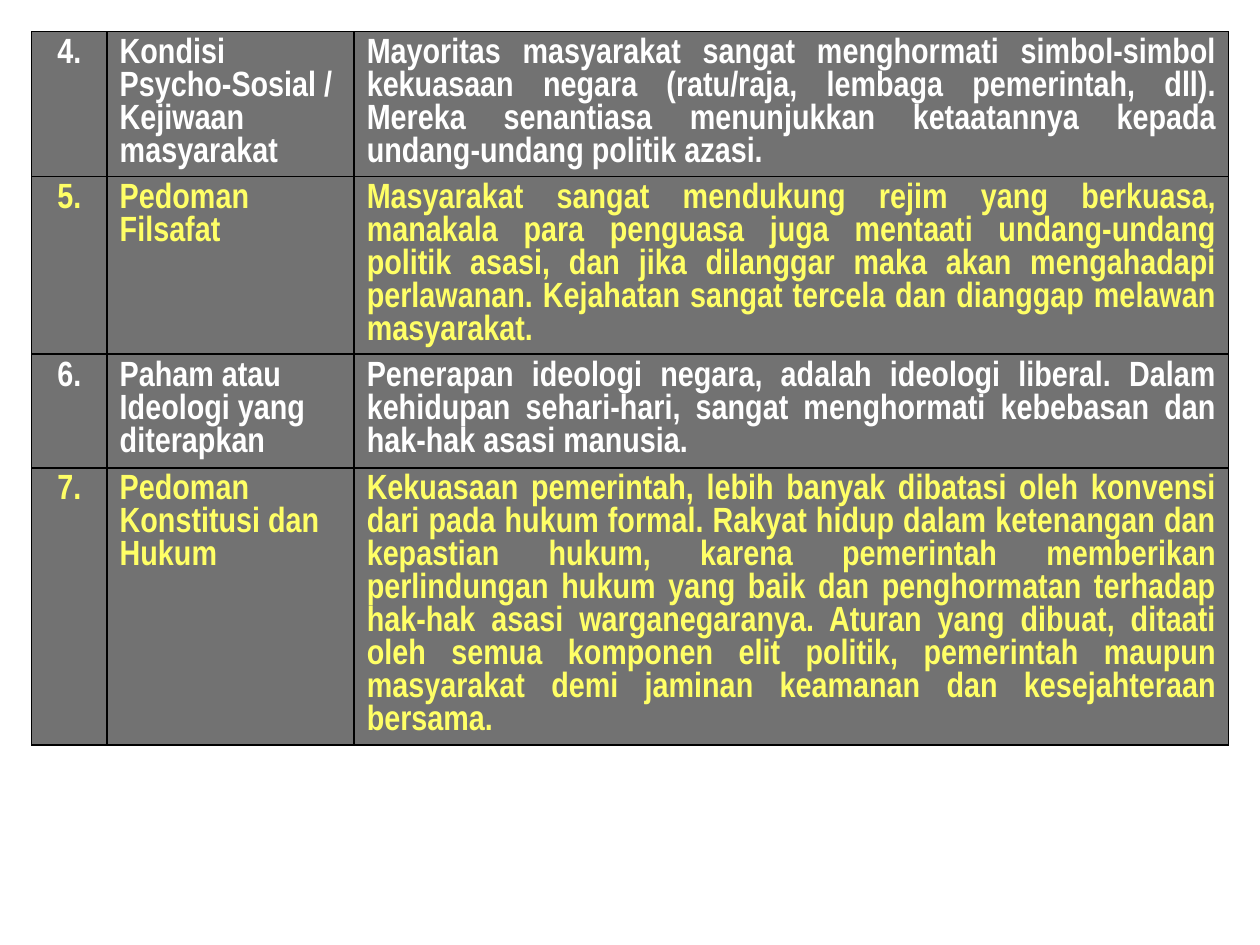
"""Build a slide with a table of political conditions, rows 4 to 7."""
from dataclasses import dataclass

from lxml import etree
from pptx import Presentation
from pptx.dml.color import RGBColor
from pptx.enum.text import PP_ALIGN
from pptx.oxml import parse_xml
from pptx.oxml.ns import nsdecls, qn
from pptx.util import Cm, Pt

CENTER, LEFT, JUSTIFY = PP_ALIGN.CENTER, PP_ALIGN.LEFT, PP_ALIGN.JUSTIFY
FONT, SIZE = "Arial Narrow", 20
WHITE, YELLOW, DARK, BLACK = "FFFFFF", "FFFF66", "0D0D0D", "000000"
OPACITY = 58
MARGIN = 0.64
COLUMN_WIDTHS = (1.52, 4.98, 17.63)
ALIGNMENTS = (CENTER, LEFT, JUSTIFY)
BORDER_SIDES = ("lnL", "lnR", "lnT", "lnB")


@dataclass
class Aspect:
    number: str
    name: str
    description: str
    height: float
    color: str


ASPECTS = (
    Aspect(
        "4.", "Kondisi Psycho-Sosial / Kejiwaan masyarakat",
        "Mayoritas masyarakat sangat menghormati simbol-simbol kekuasaan negara "
        "(ratu/raja, lembaga pemerintah, dll). Mereka senantiasa menunjukkan "
        "ketaatannya kepada undang-undang politik azasi.",
        2.92, WHITE),
    Aspect(
        "5.", "Pedoman Filsafat",
        "Masyarakat sangat mendukung rejim yang berkuasa, manakala para penguasa "
        "juga mentaati undang-undang politik asasi, dan jika dilanggar maka akan "
        "mengahadapi perlawanan. Kejahatan sangat tercela dan dianggap melawan "
        "masyarakat.",
        3.58, YELLOW),
    Aspect(
        "6.", "Paham atau Ideologi yang diterapkan",
        "Penerapan ideologi negara, adalah ideologi liberal. Dalam kehidupan "
        "sehari-hari, sangat menghormati kebebasan dan hak-hak asasi manusia.",
        2.29, WHITE),
    Aspect(
        "7.", "Pedoman Konstitusi dan Hukum",
        "Kekuasaan pemerintah, lebih banyak dibatasi oleh konvensi dari pada hukum "
        "formal. Rakyat hidup dalam ketenangan dan kepastian hukum, karena "
        "pemerintah memberikan perlindungan hukum yang baik dan penghormatan "
        "terhadap hak-hak asasi warganegaranya. Aturan yang dibuat, ditaati oleh "
        "semua komponen elit politik, pemerintah maupun masyarakat demi jaminan "
        "keamanan dan kesejahteraan bersama.",
        5.59, YELLOW),
)


def paint(target, color: str) -> None:
    """Give a fill or a font a solid colour."""
    fill = target.fill
    fill.solid()
    fill.fore_color.rgb = RGBColor.from_string(color)


def style_cell(cell) -> None:
    """Apply the translucent fill and the thin borders."""
    paint(cell, DARK)
    properties = cell._tc.get_or_add_tcPr()
    shade = properties.find(f"{qn('a:solidFill')}/{qn('a:srgbClr')}")
    etree.SubElement(shade, qn("a:alpha"), val=str(OPACITY * 1000))
    for index, side in enumerate(BORDER_SIDES):
        properties.insert(index, parse_xml(
            f'<a:{side} {nsdecls("a")} w="{Pt(1)}"><a:solidFill>'
            f'<a:srgbClr val="{BLACK}"/></a:solidFill></a:{side}>'))


def write_cell(cell, text: str, alignment: PP_ALIGN, color: str) -> None:
    """Write one bold paragraph into a cell."""
    para = cell.text_frame.paragraphs[0]
    para.alignment = alignment
    span = para.add_run()
    span.text = text
    span.font.name = FONT
    span.font.size = Pt(SIZE)
    span.font.bold = True
    paint(span.font, color)


def add_aspect_table(page) -> None:
    """Draw all aspects as one table."""
    frame = page.shapes.add_table(
        len(ASPECTS), len(COLUMN_WIDTHS), Cm(MARGIN), Cm(MARGIN),
        Cm(sum(COLUMN_WIDTHS)), Cm(sum(aspect.height for aspect in ASPECTS)))
    table = frame.table
    table.first_row = False
    table.horz_banding = False
    for column, width in zip(table.columns, COLUMN_WIDTHS):
        column.width = Cm(width)
    for row, aspect in zip(table.rows, ASPECTS):
        row.height = Cm(aspect.height)
        texts = (aspect.number, aspect.name, aspect.description)
        for cell, text, alignment in zip(row.cells, texts, ALIGNMENTS):
            style_cell(cell)
            write_cell(cell, text, alignment, aspect.color)


def main() -> None:
    """Create and save the deck."""
    deck = Presentation()
    deck.slide_width, deck.slide_height = Cm(25.4), Cm(19.05)
    page = deck.slides.add_slide(deck.slide_layouts[6])
    paint(page.background, WHITE)
    add_aspect_table(page)
    deck.save("out.pptx")


if __name__ == "__main__":
    main()
